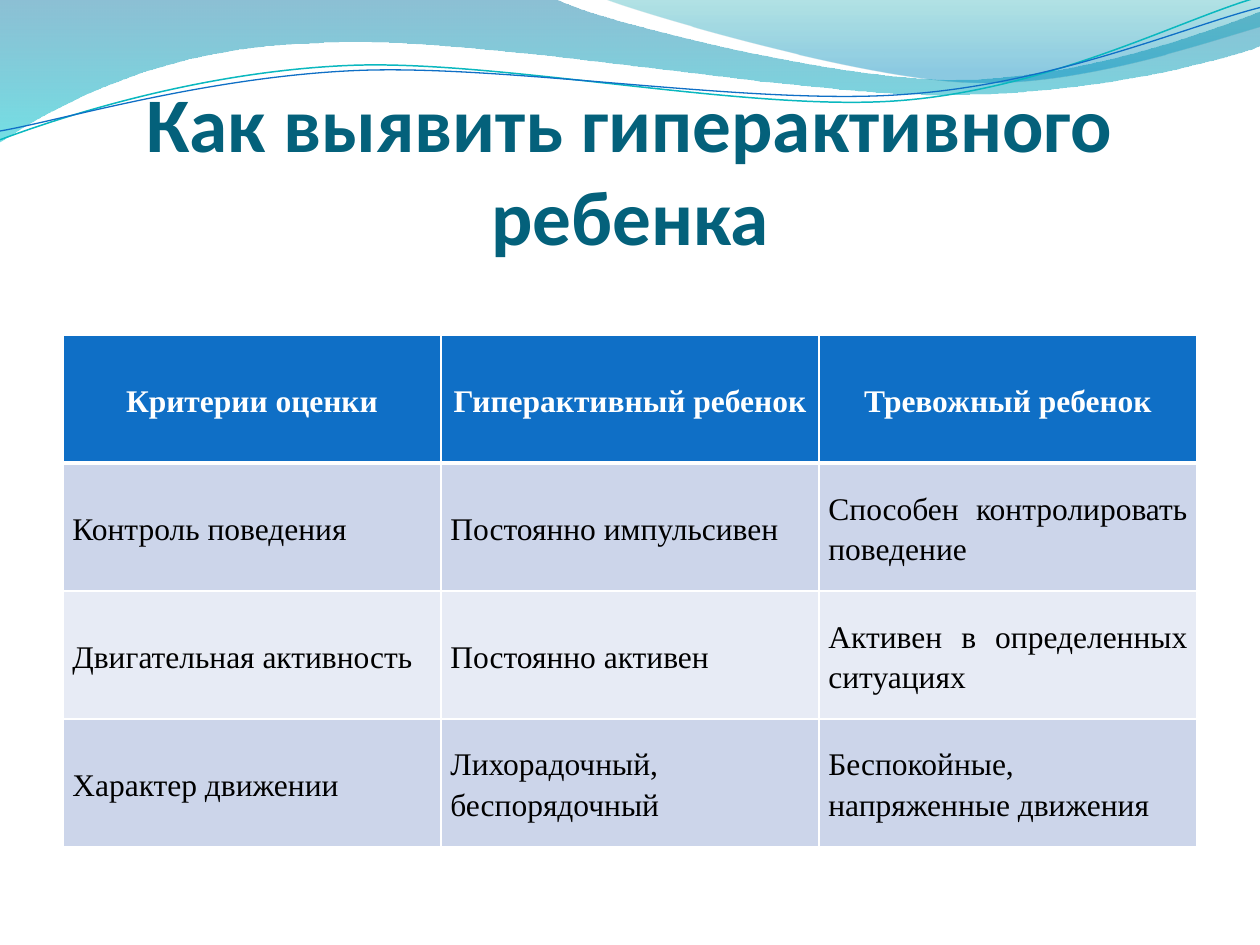
from lxml import etree
from pptx import Presentation
from pptx.dml.color import RGBColor
from pptx.enum.text import MSO_ANCHOR, MSO_AUTO_SIZE, PP_ALIGN
from pptx.oxml import parse_xml
from pptx.oxml.ns import nsdecls, qn
from pptx.util import Inches, Pt

CENTER, JUSTIFY = PP_ALIGN.CENTER, PP_ALIGN.JUSTIFY
MIDDLE, BOTTOM = MSO_ANCHOR.MIDDLE, MSO_ANCHOR.BOTTOM
NO_AUTOFIT = MSO_AUTO_SIZE.NONE

COLORS = {
    "title": "04617B", "header": "0F6FC6", "odd": "CCD5EA", "even": "E7EBF5",
    "white": "FFFFFF", "black": "000000", "teal": "0AB8BF",
    "wave_top": "0074A1", "wave_end": "00C6CF",
    "crest_top": "00A1A9", "crest_end": "008BBF",
}

# Each path is a list of steps: 2 numbers draw a line, 6 numbers a Bezier curve.
WAVE = [(0, 0), (4.4, -0.01), (4.76, 0.17, 6.64, 0.63, 7.58, 0.63),
        (8.53, 0.63, 9.58, 0.26, 10, 0.09), (10.01, 0.36),
        (9.83, 0.44, 8.7, 0.76, 7.46, 0.75), (6.22, 0.75, 3.82, 0.28, 2.57, 0.34),
        (1.29, 0.36, 0.46, 0.83, -0.01, 1.13), (0, 0)]
CREST = [(4.79, -0.01), (5.09, 0.11, 6.82, 0.62, 7.69, 0.65),
         (8.56, 0.69, 9.61, 0.32, 10, 0.21), (10, 0), (4.79, -0.01)]
TEAL_LINE = [(0, 1.11), (0.48, 0.93, 1.58, 0.57, 2.77, 0.52),
             (3.95, 0.47, 5.93, 0.89, 7.13, 0.8), (8.33, 0.71, 9.38, 0.15, 9.98, -0.02)]
BLUE_LINE = [(0, 1.04), (0.47, 0.96, 1.64, 0.61, 2.83, 0.56),
             (4.03, 0.51, 5.97, 0.84, 7.17, 0.75), (8.36, 0.67, 9.41, 0.21, 10, 0.06)]

ROWS = [
    ("Критерии оценки", "Гиперактивный ребенок", "Тревожный ребенок"),
    ("Контроль поведения", "Постоянно импульсивен", "Способен контролировать поведение"),
    ("Двигательная активность", "Постоянно активен", "Активен в определенных ситуациях"),
    ("Характер движении", "Лихорадочный, беспорядочный", "Беспокойные, напряженные движения"),
]


def rgb(name):
    return RGBColor.from_string(COLORS[name])


class SlideBuilder:
    heading_font = "Calibri"
    body_font = "Times New Roman"

    def __init__(self, slide):
        self.slide = slide

    def style(self, p, font, size, color, bold, align):
        p.alignment = align
        p.font.name, p.font.size, p.font.bold = font, Pt(size), bold
        p.font.color.rgb = rgb(color)

    def outline(self, steps, close):
        """Draw the steps as a freeform, joining each curve's three points into a Bezier."""
        points = [(Inches(step[i]), Inches(step[i + 1]))
                  for step in steps for i in range(0, len(step), 2)]
        builder = self.slide.shapes.build_freeform(*points[0])
        builder.add_line_segments(points[1:], close=close)
        sp = builder.convert_to_shape()
        sp.shadow.inherit = False
        segments = iter(list(sp._element.iter(qn("a:lnTo"))))
        for step in steps[1:]:
            segment = next(segments)
            if len(step) == 6:
                segment.addprevious(curve := parse_xml(f'<a:cubicBezTo {nsdecls("a")}/>'))
                for line in (segment, next(segments), next(segments)):
                    curve.append(line[0])
                    line.getparent().remove(line)
        return sp

    def gradient_wave(self, steps, *stops):
        """Fill a closed outline from top to bottom; a stop is (position, color, opacity %)."""
        sp = self.outline(steps, True)
        sp.line.fill.background()
        sp.fill.gradient()
        sp.fill.gradient_angle = 270
        for stop, (position, color, _) in zip(sp.fill.gradient_stops, stops):
            stop.position = position
            stop.color.rgb = rgb(color)
        for clr, (_, _, opacity) in zip(sp._element.spPr.iter(qn("a:srgbClr")), stops):
            etree.SubElement(clr, qn("a:alpha"), val=str(opacity * 1000))

    def curve(self, steps, color, width):
        sp = self.outline(steps, False)
        sp.fill.background()
        sp.line.color.rgb = rgb(color)
        sp.line.width = Pt(width)

    def title(self, text, left, top, width, height):
        sp = self.slide.shapes.title
        sp.left, sp.top, sp.width, sp.height = map(Inches, (left, top, width, height))
        self.slide.shapes._spTree.append(sp._element)  # in front of the waves
        tf = sp.text_frame
        tf.text = text
        tf.word_wrap, tf.auto_size, tf.vertical_anchor = True, NO_AUTOFIT, BOTTOM
        tf.margin_left = tf.margin_right = tf.margin_top = 0
        tf.margin_bottom = Inches(0.74)
        self.style(tf.paragraphs[0], self.heading_font, 44.1, "title", True, CENTER)

    def borders(self, cell, **widths):
        tc_pr = cell._tc.get_or_add_tcPr()
        for side in "LRTB":
            tc_pr.append(parse_xml(
                f'<a:ln{side} {nsdecls("a")} w="{Pt(widths.get(side, 1))}"><a:solidFill>'
                f'<a:srgbClr val="{COLORS["white"]}"/></a:solidFill></a:ln{side}>'))

    def cell(self, cell, text, row):
        header = row == 0
        self.borders(cell, T=3 if row == 1 else 1, B=3 if header else 1)
        cell.fill.solid()
        cell.fill.fore_color.rgb = rgb("header" if header else "odd" if row % 2 else "even")
        cell.vertical_anchor = MIDDLE
        cell.margin_left = cell.margin_right = Pt(5.4)
        cell.margin_top = cell.margin_bottom = 0
        cell.text = text
        p = cell.text_frame.paragraphs[0]
        p.line_spacing, p.space_after = 1.15, Pt(10)
        self.style(p, self.body_font, 18, "white" if header else "black",
                   header, CENTER if header else JUSTIFY)

    def table(self, rows, left, top, width, height):
        box = map(Inches, (left, top, width, height))
        table = self.slide.shapes.add_table(len(rows), len(rows[0]), *box).table
        for r, texts in enumerate(rows):
            for c, text in enumerate(texts):
                self.cell(table.cell(r, c), text, r)


def main():
    prs = Presentation()
    prs.slide_width, prs.slide_height = Inches(10), Inches(7.5)
    s = SlideBuilder(prs.slides.add_slide(prs.slide_layouts[5]))
    s.gradient_wave(WAVE, (0, "wave_top", 45), (1, "wave_end", 55))
    s.gradient_wave(CREST, (0, "crest_top", 30), (0.8, "crest_end", 45))
    s.curve(TEAL_LINE, "teal", 0.85)
    s.curve(BLUE_LINE, "header", 0.75)
    s.title("Как выявить гиперактивного ребенка", 0.5, 0.56, 9, 2.25)
    s.table(ROWS, 0.5, 2.66, 9, 4.06)
    prs.save("out.pptx")


if __name__ == "__main__":
    main()
